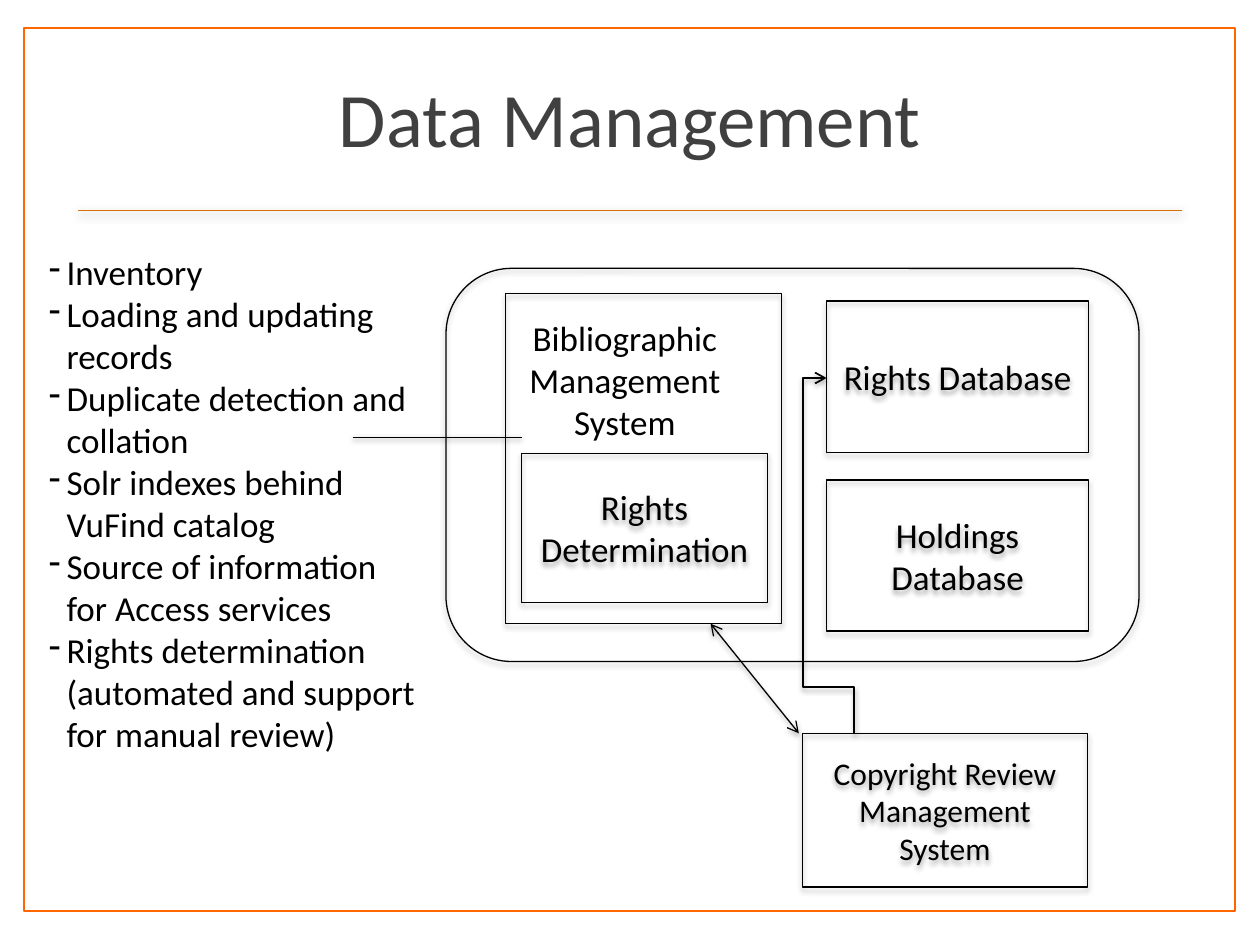
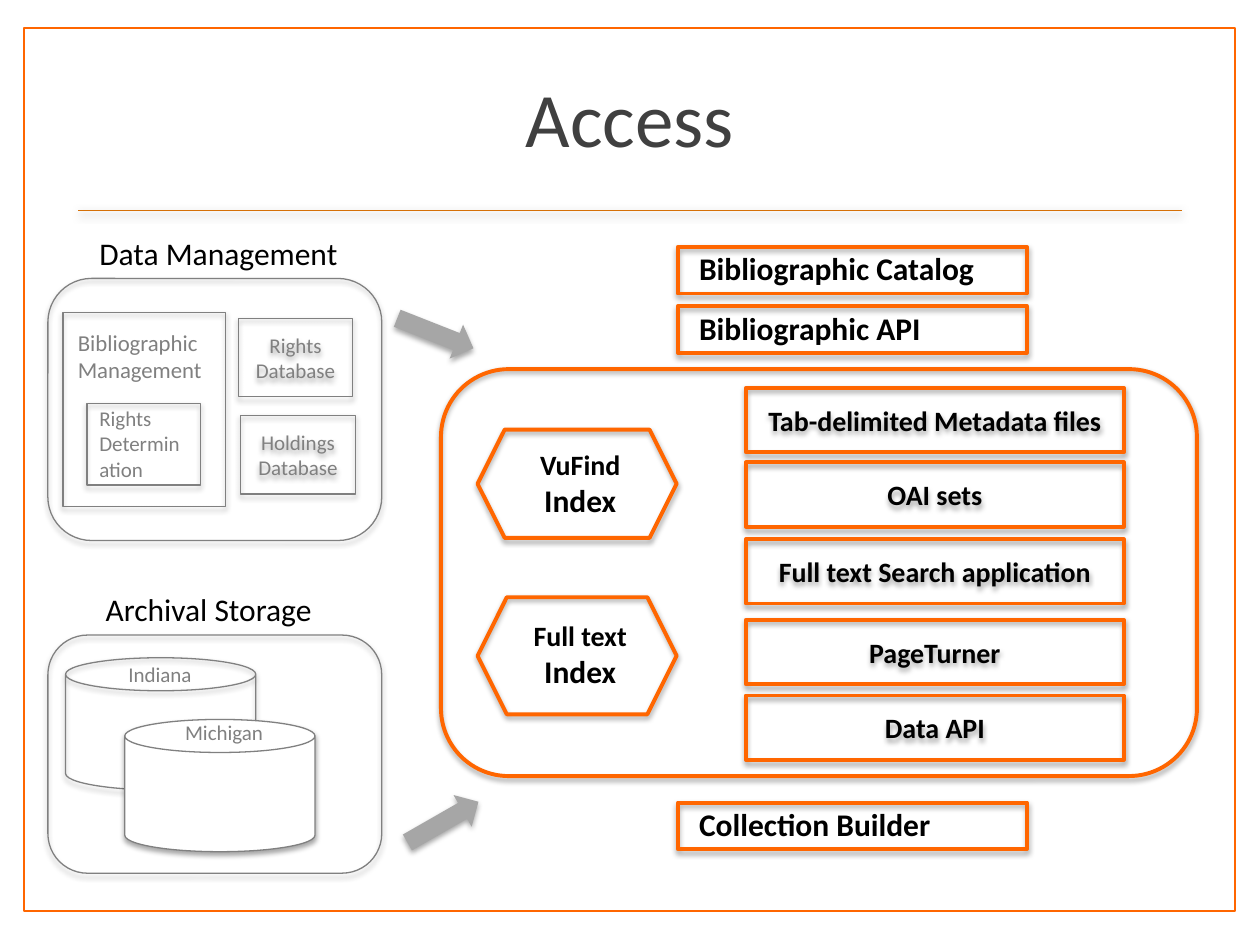
from dataclasses import dataclass, replace
from typing import NamedTuple

from lxml import etree
from pptx import Presentation
from pptx.dml.color import RGBColor
from pptx.enum.shapes import MSO_CONNECTOR, MSO_SHAPE
from pptx.enum.text import MSO_ANCHOR, PP_ALIGN
from pptx.oxml.ns import qn
from pptx.util import Inches, Pt

RECT, ROUND = MSO_SHAPE.RECTANGLE, MSO_SHAPE.ROUNDED_RECTANGLE
CAN, HEXAGON, ARROW = MSO_SHAPE.CAN, MSO_SHAPE.HEXAGON, MSO_SHAPE.RIGHT_ARROW
STRAIGHT, ELBOW = MSO_CONNECTOR.STRAIGHT, MSO_CONNECTOR.ELBOW
LEFT, CENTER = PP_ALIGN.LEFT, PP_ALIGN.CENTER
TOP, MIDDLE = MSO_ANCHOR.TOP, MSO_ANCHOR.MIDDLE

FONT = "Calibri"
BLACK, WHITE, GREY, SILVER = "000000", "FFFFFF", "808080", "A6A6A6"
ORANGE, RULE_ORANGE, TITLE_GREY = "FF6600", "D57007", "404040"


class Shadow(NamedTuple):
    opacity: int
    blur: float
    distance: float


class Place(NamedTuple):
    left: float
    top: float
    width: float
    height: float


@dataclass(frozen=True)
class TextStyle:
    size: float
    color: str = BLACK
    bold: bool = False
    align: PP_ALIGN = LEFT
    anchor: MSO_ANCHOR = TOP


@dataclass(frozen=True)
class Outline:
    color: str
    width: float


@dataclass(frozen=True)
class Block:
    place: Place
    kind: MSO_SHAPE = RECT
    text: str = ""
    fill: str = ""
    rotation: float = 0


@dataclass(frozen=True)
class Label:
    place: Place
    text: str
    style: TextStyle


@dataclass(frozen=True)
class Link:
    start: tuple[float, float]
    end: tuple[float, float]
    heads: tuple[str, ...] = ()
    width: float = 0.75


SHAPE_SHADOW = Shadow(35, 3.1, 1.8)
LINK_SHADOW = Shadow(38, 3.1, 1.6)
RULE_SHADOW = Shadow(35, 5, 1.8)

THIN_BLACK = Outline(BLACK, 0.75)
THIN_GREY = Outline(GREY, 0.75)
THICK_ORANGE = Outline(ORANGE, 2.25)

TITLE = TextStyle(44, TITLE_GREY, align=CENTER, anchor=MIDDLE)
BOX_20 = TextStyle(20, align=CENTER, anchor=MIDDLE)
BOX_18 = replace(BOX_20, size=18)
BOX_GREY = replace(BOX_20, size=12, color=GREY)
BOX_BOLD = replace(BOX_20, size=16, bold=True)
SMALL_GREY = TextStyle(12, GREY)
HEADING = TextStyle(18)
BOLD_HEADING = TextStyle(18, bold=True)


def rgb(color: str) -> RGBColor:
    return RGBColor.from_string(color)


def inches(values) -> list:
    return [Inches(value) for value in values]


def set_shadow(shape, shadow: Shadow | None) -> None:
    """Replace the theme's effect with the given shadow, or with none."""
    properties = shape._element.spPr
    effects = etree.SubElement(properties, qn("a:effectLst"))
    if shadow is None:
        return
    outer = etree.SubElement(
        effects, qn("a:outerShdw"), blurRad=str(int(Pt(shadow.blur))),
        dist=str(int(Pt(shadow.distance))), dir="5400000", rotWithShape="0")
    color = etree.SubElement(outer, qn("a:srgbClr"), val=BLACK)
    etree.SubElement(color, qn("a:alpha"), val=str(shadow.opacity * 1000))


def format_para(para, style: TextStyle, size: float = 0) -> None:
    para.alignment = style.align
    formats = {"name": FONT, "size": Pt(size or style.size), "bold": style.bold}
    for span in para.runs:
        for name, value in formats.items():
            setattr(span.font, name, value)
        span.font.color.rgb = rgb(style.color)


def write(shape, text: str, style: TextStyle) -> None:
    frame = shape.text_frame
    frame.word_wrap = True
    frame.vertical_anchor = style.anchor
    frame.text = text
    for para in frame.paragraphs:
        format_para(para, style)


def draw_block(page, block: Block, outline: Outline | None, style: TextStyle | None = None,
               shadow: Shadow | None = SHAPE_SHADOW) -> None:
    shape = page.shapes.add_shape(block.kind, *inches(block.place))
    shape.rotation = block.rotation
    if block.fill:
        shape.fill.solid()
        shape.fill.fore_color.rgb = rgb(block.fill)
    else:
        shape.fill.background()
    if outline:
        shape.line.color.rgb = rgb(outline.color)
        shape.line.width = Pt(outline.width)
    else:
        shape.line.fill.background()
    set_shadow(shape, shadow)
    if block.text and style:
        write(shape, block.text, style)


def draw_label(page, label: Label):
    box = page.shapes.add_textbox(*inches(label.place))
    write(box, label.text, label.style)
    return box


def draw_link(page, link: Link, color: str = BLACK, shadow: Shadow = LINK_SHADOW,
              kind: MSO_CONNECTOR = STRAIGHT):
    line = page.shapes.add_connector(kind, *inches(link.start + link.end))
    line.line.color.rgb = rgb(color)
    line.line.width = Pt(link.width)
    for end in link.heads:
        etree.SubElement(line._element.spPr.find(qn("a:ln")), qn(f"a:{end}"), type="arrow")
    set_shadow(line, shadow)
    return line


def draw_four_part_elbow(page, link: Link, across: float, down: float) -> None:
    """Elbow with three bends; the bends are shares of its width and height."""
    line = draw_link(page, link, kind=ELBOW)
    geometry = line._element.spPr.find(qn("a:prstGeom"))
    geometry.set("prst", "bentConnector4")
    guides = geometry.find(qn("a:avLst"))
    for name, share in (("adj1", across), ("adj2", down)):
        etree.SubElement(guides, qn("a:gd"), name=name, fmla=f"val {round(share * 100000)}")


def draw_dash_list(page, label: Label) -> None:
    box = draw_label(page, label)
    for para in box.text_frame.paragraphs:
        properties = para._p.get_or_add_pPr()
        properties.set("marL", str(Inches(0.14)))
        properties.set("indent", str(-Inches(0.14)))
        etree.SubElement(properties, qn("a:buChar"), char="-")


def add_page(deck, title: str):
    """Blank page with the shared frame, rule and title."""
    page = deck.slides.add_slide(deck.slide_layouts[6])
    draw_block(page, Block(Place(0.19, 0.22, 9.61, 7.01), fill=WHITE),
               Outline(ORANGE, 1), shadow=None)
    draw_link(page, Link((0.62, 1.67), (9.38, 1.67), width=1), RULE_ORANGE, RULE_SHADOW)
    draw_label(page, Label(Place(0.5, 0.3, 9, 1.25), title, TITLE))
    return page


def build_data_management(deck) -> None:
    page = add_page(deck, "Data Management")

    # Systems and databases
    for block in (
        Block(Place(3.54, 2.13, 5.5, 3.12), ROUND),
        Block(Place(4.01, 2.33, 2.19, 2.62)),
        Block(Place(4.14, 3.6, 1.95, 1.18), text="Rights Determination"),
        Block(Place(6.56, 2.39, 2.08, 1.2), text="Rights Database"),
        Block(Place(6.56, 3.81, 2.08, 1.2), text="Holdings Database"),
    ):
        draw_block(page, block, THIN_BLACK, BOX_20)
    draw_block(page, Block(Place(6.37, 5.82, 2.26, 1.22),
                           text="Copyright Review Management System"), THIN_BLACK, BOX_18)
    draw_label(page, Label(Place(4.01, 2.46, 1.9, 1.41), "Bibliographic Management System",
                           replace(BOX_20, anchor=TOP)))

    # Tasks of the bibliographic system
    tasks = (
        "Inventory",
        "Loading and updating\vrecords",
        "Duplicate detection and\vcollation",
        "Solr indexes behind\vVuFind catalog",
        "Source of information\vfor Access services",
        "Rights determination\v(automated and support\vfor manual review)",
    )
    draw_dash_list(page, Label(Place(0.29, 1.94, 3.16, 4.78), "\n".join(tasks), TextStyle(20)))

    # Connections
    draw_link(page, Link((2.8, 3.47), (4.14, 3.47)))
    draw_link(page, Link((6.34, 5.82), (5.64, 4.95), ("headEnd", "tailEnd")))
    draw_four_part_elbow(page, Link((6.56, 3), (6.78, 5.82), ("headEnd",), 1), -0.85, 0.87)


def build_access(deck) -> None:
    page = add_page(deck, "Access")

    # Data management and archival storage
    for block in (
        Block(Place(0.38, 2.21, 2.65, 2.08), ROUND),
        Block(Place(0.5, 2.48, 1.29, 1.54)),
        Block(Place(0.69, 3.2, 0.9, 0.65)),
        Block(Place(1.89, 2.53, 0.91, 0.62), text="Rights Database"),
        Block(Place(1.91, 3.3, 0.91, 0.62), text="Holdings Database"),
        Block(Place(0.38, 5.04, 2.65, 1.89), ROUND),
        Block(Place(0.52, 5.22, 1.51, 1.05), CAN),
        Block(Place(0.99, 5.71, 1.51, 1.05), CAN, fill=WHITE),
    ):
        draw_block(page, block, THIN_GREY, BOX_GREY)
    for label in (
        Label(Place(1.37, 5.66, 0.98, 0.3), "Michigan", SMALL_GREY),
        Label(Place(0.92, 5.2, 0.76, 0.3), "Indiana", SMALL_GREY),
        Label(Place(0.69, 3.17, 0.9, 0.71), "Rights\nDetermination", SMALL_GREY),
        Label(Place(0.52, 2.56, 1.27, 0.54), "Bibliographic Management",
              replace(SMALL_GREY, size=13)),
        Label(Place(0.69, 1.81, 2.51, 0.4), "Data Management", HEADING),
        Label(Place(0.74, 4.63, 1.94, 0.4), "Archival Storage", HEADING),
    ):
        draw_label(page, label)

    # Access services inside the orange panel
    draw_block(page, Block(Place(3.5, 2.93, 6, 3.23), ROUND), THICK_ORANGE)
    services = {
        "Tab-delimited Metadata files": 3.08,
        "OAI sets": 3.67,
        "Full text Search application": 4.28,
        "PageTurner": 4.92,
        "Data API": 5.52,
    }
    for service, top in services.items():
        draw_block(page, Block(Place(5.92, top, 3, 0.51), text=service), THICK_ORANGE, BOX_BOLD)

    # Indexes
    for name, top, height, text_top in (("VuFind", 3.41, 0.86, 3.5),
                                        ("Full text", 4.74, 0.93, 4.86)):
        draw_block(page, Block(Place(3.79, top, 1.58, height), HEXAGON), THICK_ORANGE)
        box = draw_label(page, Label(Place(4, text_top, 1.21, 0.67), f"{name}\nIndex", BOX_BOLD))
        format_para(box.text_frame.paragraphs[1], BOX_BOLD, 18)

    # Services outside the panel
    for service, top in (("Bibliographic Catalog", 1.96), ("Bibliographic API", 2.43),
                         ("Collection Builder", 6.37)):
        draw_block(page, Block(Place(5.38, top, 2.77, 0.37)), THICK_ORANGE)
        draw_label(page, Label(Place(5.45, top - 0.03, 2.6, 0.4), service, BOLD_HEADING))

    # Flow arrows
    for left, top, rotation in ((3.13, 2.5, 21.5), (3.19, 6.38, 330.2)):
        draw_block(page, Block(Place(left, top, 0.65, 0.29), ARROW, fill=SILVER,
                               rotation=rotation), None)


def main() -> None:
    deck = Presentation()
    deck.slide_width, deck.slide_height = Inches(10), Inches(7.5)
    build_data_management(deck)
    build_access(deck)
    deck.save("out.pptx")


if __name__ == "__main__":
    main()
